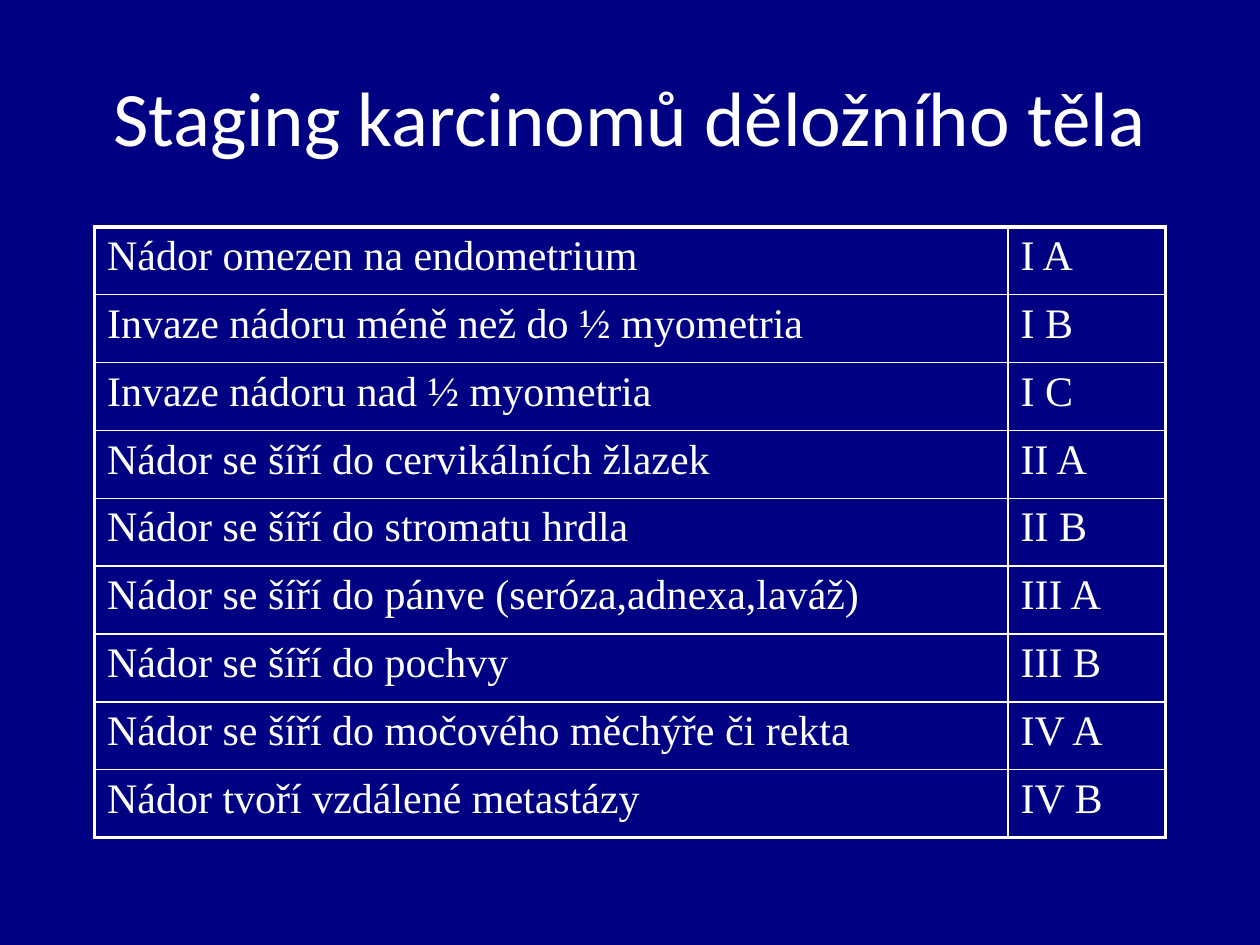
from dataclasses import dataclass

from lxml import etree
from pptx import Presentation
from pptx import util as u
from pptx.dml.color import RGBColor
from pptx.enum import text
from pptx.oxml.ns import qn

COLORS = {"background": "000082", "foreground": "FFFFFF"}
OUTER_LINE, INNER_LINE = u.Pt(2.25), u.Pt(1)
COLUMN_WIDTHS = (7.25, 1.25)
ROW_HEIGHT = 4.85 / 9


@dataclass(frozen=True)
class Stage:
    finding: str
    code: str


STAGES = [
    Stage("Nádor omezen na endometrium", "I A"),
    Stage("Invaze nádoru méně než do ½ myometria", "I B"),
    Stage("Invaze nádoru nad ½ myometria", "I C"),
    Stage("Nádor se šíří do cervikálních žlazek", "II A"),
    Stage("Nádor se šíří do stromatu hrdla", "II B"),
    Stage("Nádor se šíří do pánve (seróza,adnexa,laváž)", "III A"),
    Stage("Nádor se šíří do pochvy", "III B"),
    Stage("Nádor se šíří do močového měchýře či rekta", "IV A"),
    Stage("Nádor tvoří vzdálené metastázy", "IV B"),
]


def set_font(paragraph, name: str, size: float) -> None:
    paragraph.font.name = name
    paragraph.font.size = u.Pt(size)
    paragraph.font.color.rgb = RGBColor.from_string(COLORS["foreground"])


def set_borders(cell, outer_sides: dict[str, bool]) -> None:
    """Draw all four borders, thicker where the side is on the table's edge."""
    properties = cell._tc.get_or_add_tcPr()
    for index, (side, is_outer) in enumerate(outer_sides.items()):
        width = OUTER_LINE if is_outer else INNER_LINE
        line = etree.Element(qn(f"a:ln{side}"), w=str(int(width)))
        fill = etree.SubElement(line, qn("a:solidFill"))
        etree.SubElement(fill, qn("a:srgbClr"), val=COLORS["foreground"])
        properties.insert(index, line)


def add_title(slide, title: str) -> None:
    shape = slide.shapes.add_textbox(
        u.Inches(0.75), u.Inches(0.25), u.Inches(8.5), u.Inches(1.33))
    frame = shape.text_frame
    frame.word_wrap = True
    frame.vertical_anchor = text.MSO_ANCHOR.MIDDLE
    paragraph = frame.paragraphs[0]
    paragraph.text = title
    paragraph.alignment = text.PP_ALIGN.CENTER
    set_font(paragraph, "Calibri", 44)


def add_staging_table(slide, stages: list[Stage]) -> None:
    last_row, last_column = len(stages) - 1, len(COLUMN_WIDTHS) - 1
    table = slide.shapes.add_table(
        len(stages), len(COLUMN_WIDTHS), u.Inches(0.75), u.Inches(1.8),
        u.Inches(sum(COLUMN_WIDTHS)), u.Inches(ROW_HEIGHT * len(stages))).table
    table.first_row = table.horz_banding = False
    for column, width in zip(table.columns, COLUMN_WIDTHS):
        column.width = u.Inches(width)
    for row, stage in enumerate(stages):
        table.rows[row].height = u.Inches(ROW_HEIGHT)
        for column, content in enumerate((stage.finding, stage.code)):
            cell = table.cell(row, column)
            cell.text = content
            cell.fill.background()
            set_font(cell.text_frame.paragraphs[0], "Times New Roman", 24)
            set_borders(cell, {"L": column == 0, "R": column == last_column,
                               "T": row == 0, "B": row == last_row})


def main() -> None:
    presentation = Presentation()
    presentation.slide_width = u.Inches(10)
    presentation.slide_height = u.Inches(7.5)
    slide = presentation.slides.add_slide(presentation.slide_layouts[6])

    # Background
    slide.background.fill.solid()
    slide.background.fill.fore_color.rgb = RGBColor.from_string(COLORS["background"])

    # Heading and staging table
    add_title(slide, "Staging karcinomů děložního těla")
    add_staging_table(slide, STAGES)

    presentation.save("out.pptx")


if __name__ == "__main__":
    main()
